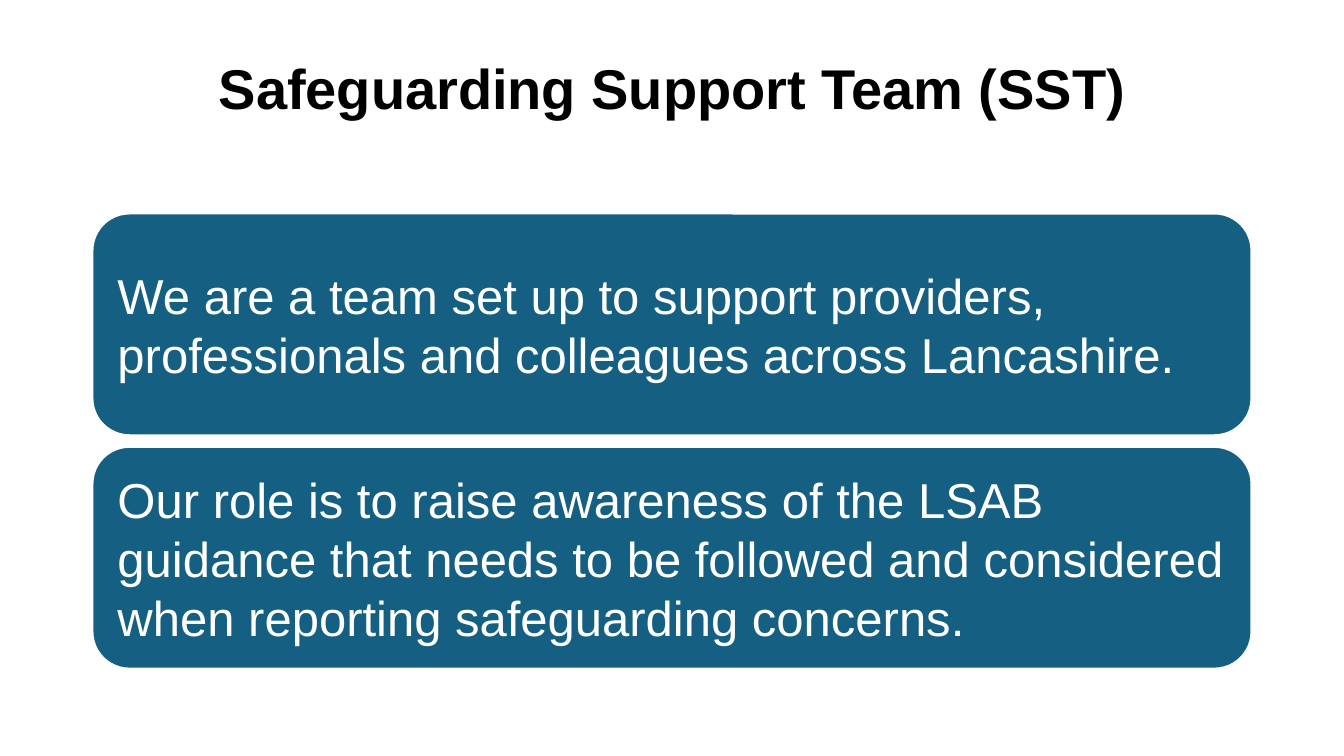
"""Build the Safeguarding Support Team slide."""
from pptx import Presentation
from pptx.dml.color import RGBColor
from pptx.enum.shapes import MSO_SHAPE
from pptx.enum.text import MSO_ANCHOR, PP_ALIGN
from pptx.util import Cm, Pt

TITLE = "Safeguarding Support Team (SST)"
STATEMENTS = [
    "We are a team set up to support providers, professionals and colleagues "
    "across Lancashire.",
    "Our role is to raise awareness of the LSAB guidance that needs to be "
    "followed and considered when reporting safeguarding concerns.",
]

FONT = "Arial"
BLACK = RGBColor(0x00, 0x00, 0x00)
WHITE = RGBColor(0xFF, 0xFF, 0xFF)
TEAL = RGBColor(0x15, 0x60, 0x82)
ROUNDED = MSO_SHAPE.ROUNDED_RECTANGLE
MIDDLE = MSO_ANCHOR.MIDDLE
CENTER, LEFT = PP_ALIGN.CENTER, PP_ALIGN.LEFT

MARGIN, WIDTH = Cm(2.33), Cm(29.21)
TITLE_TOP, TITLE_HEIGHT = Cm(1.01), Cm(2.57)
CARD_TOP, CARD_HEIGHT, CARD_STEP = Cm(5.38), Cm(5.59), Cm(5.88)
CARD_INSET = Cm(0.36)


def write(shape, text, size, color, align, spacing, bold=False):
    frame = shape.text_frame
    frame.word_wrap = True
    frame.vertical_anchor = MIDDLE
    frame.text = text
    para = frame.paragraphs[0]
    para.alignment = align
    para.line_spacing = spacing
    font = para.runs[0].font
    font.name, font.size, font.bold = FONT, Pt(size), bold
    font.color.rgb = color


def add_card(page, top, text):
    card = page.shapes.add_shape(ROUNDED, MARGIN, top, WIDTH, CARD_HEIGHT)
    card.shadow.inherit = False
    card.fill.solid()
    card.fill.fore_color.rgb = TEAL
    card.line.color.rgb = WHITE
    card.line.width = Pt(1.5)
    frame = card.text_frame
    frame.margin_left = frame.margin_right = CARD_INSET
    frame.margin_top = frame.margin_bottom = CARD_INSET
    write(card, text, 35, WHITE, LEFT, 1.0)


def main():
    deck = Presentation()
    deck.slide_width, deck.slide_height = Cm(33.87), Cm(19.05)
    page = deck.slides.add_slide(deck.slide_layouts[6])
    title = page.shapes.add_textbox(MARGIN, TITLE_TOP, WIDTH, TITLE_HEIGHT)
    write(title, TITLE, 40, BLACK, CENTER, 0.9, bold=True)
    for index, statement in enumerate(STATEMENTS):
        add_card(page, CARD_TOP + index * CARD_STEP, statement)
    deck.save("out.pptx")


if __name__ == "__main__":
    main()
